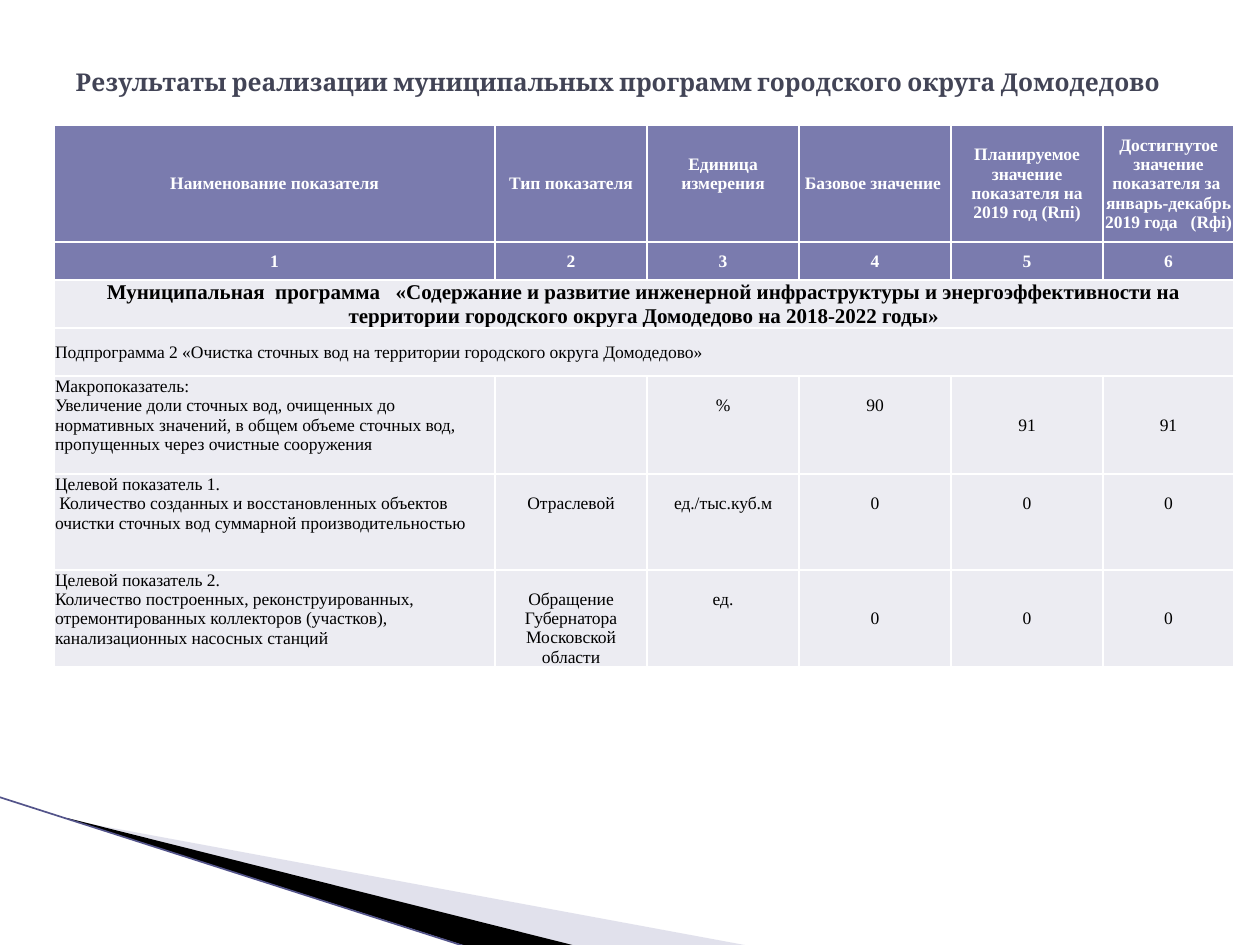
from lxml import etree
from pptx import Presentation
from pptx.dml.color import RGBColor
from pptx.enum.shapes import MSO_CONNECTOR
from pptx.enum.text import MSO_ANCHOR, PP_ALIGN
from pptx.oxml.ns import qn
from pptx.util import Pt

LINE = MSO_CONNECTOR.STRAIGHT
TOP, MID = MSO_ANCHOR.TOP, MSO_ANCHOR.MIDDLE
LEFT, CENTER = PP_ALIGN.LEFT, PP_ALIGN.CENTER
WHITE = RGBColor(0xFF, 0xFF, 0xFF)
BLACK = RGBColor(0, 0, 0)
SLATE = RGBColor(0x42, 0x44, 0x56)
HEAD = RGBColor(0x7A, 0x7B, 0xAE)
BODY = RGBColor(0xEC, 0xEC, 0xF2)
LILAC = RGBColor(0xB6, 0xB6, 0xD1)
EDGE = RGBColor(0x53, 0x54, 0x8A)
SCALE = 914400 / 126
GAP = 20

COLS = [441, 152, 152, 152, 152, 131]
ROWS = [117, 38, 48, 48, 98, 96, 97]
NAMES = [
    "Наименование показателя", "Тип показателя", "Единица измерения",
    "Базовое значение ", "Планируемое значение показателя на 2019 год (Rпi)",
    "Достигнутое значение показателя за  январь-декабрь 2019 года   (Rфi)",
]
PROGRAM = ("Муниципальная  программа   «Содержание и развитие инженерной "
           "инфраструктуры и энергоэффективности на территории городского "
           "округа Домодедово на 2018-2022 годы»")
PART = "Подпрограмма 2 «Очистка сточных вод на территории городского округа Домодедово»"
GOALS = [
    (("Макропоказатель:",
      "Увеличение доли сточных вод, очищенных до нормативных значений, в общем "
      "объеме сточных вод, пропущенных через очистные сооружения"),
     ["", "%", "90", "91", "91"], 3),
    (("Целевой показатель 1.",
      " Количество созданных и восстановленных объектов очистки сточных вод "
      "суммарной производительностью"),
     ["Отраслевой", "ед./тыс.куб.м", "0", "0", "0"], 5),
    (("Целевой показатель 2.",
      "Количество построенных, реконструированных, отремонтированных "
      "коллекторов (участков), канализационных насосных станций"),
     ["Обращение Губернатора Московской области", "ед.", "0", "0", "0"], 2),
]


def px(num):
    """Turn pixels into EMU."""
    return round(num * SCALE)


class Deck:
    """Holds the style and the current slide."""

    def __init__(self):
        self.prs = Presentation()
        self.prs.slide_width, self.prs.slide_height = px(1260), px(945)
        self.slide = self.prs.slides.add_slide(self.prs.slide_layouts[5])
        self.shapes = self.slide.shapes
        self.font = "Times New Roman"

    def run(self, para, text, size, color, bold, font=None):
        """Add one styled run."""
        run = para.add_run()
        run.text = text
        run.font.name = font or self.font
        run.font.size = Pt(size)
        run.font.bold = bold
        run.font.color.rgb = color

    def title(self, text, left, top, width, height):
        """Place and fill the title."""
        box = self.shapes.title
        box.left, box.top, box.width, box.height = map(px, (left, top, width, height))
        box.text_frame.word_wrap = True
        box.text_frame.vertical_anchor = MID
        para = box.text_frame.paragraphs[0]
        para.alignment = LEFT
        self.run(para, text, 14, SLATE, True, "Cambria")

    def wedge(self, points, color, alpha=None):
        """Draw a filled outline."""
        form = self.shapes.build_freeform(*points[0], scale=SCALE)
        form.add_line_segments(points[1:], close=True)
        shape = form.convert_to_shape()
        shape.shadow.inherit = False
        shape.fill.solid()
        shape.fill.fore_color.rgb = color
        shape.line.fill.background()
        if alpha:
            tone = shape._element.spPr.find(qn("a:solidFill"))[0]
            etree.SubElement(tone, qn("a:alpha"), val=str(alpha * 1000))

    def rule(self, start, end, color, width):
        """Draw a straight line."""
        line = self.shapes.add_connector(LINE, *map(px, start + end))
        line.line.color.rgb = color
        line.line.width = Pt(width)
        etree.SubElement(line._element.spPr, qn("a:effectLst"))

    def grid(self, left, top, cols, rows):
        """Add a plain table."""
        size = map(px, (left, top, sum(cols), sum(rows)))
        table = self.shapes.add_table(len(rows), len(cols), *size).table
        table.first_row = table.horz_banding = False
        for col, width in zip(table.columns, cols):
            col.width = px(width)
        for row, height in zip(table.rows, rows):
            row.height = px(height)
        return table

    def frame(self, cell, fill):
        """Set the fill and borders of a cell."""
        props = cell._tc.get_or_add_tcPr()
        for side in ("lnL", "lnR", "lnT", "lnB"):
            line = etree.SubElement(props, qn("a:" + side), w=str(Pt(1)))
            tone = etree.SubElement(line, qn("a:solidFill"))
            etree.SubElement(tone, qn("a:srgbClr"), val=str(WHITE))
        cell.fill.solid()
        cell.fill.fore_color.rgb = fill

    def cell(self, cell, lines, color=BLACK, size=10, bold=False,
             align=CENTER, anchor=MID, above=1, below=0):
        """Fill a cell with paragraphs."""
        cell.margin_left = cell.margin_right = px(1)
        cell.margin_top, cell.margin_bottom = px(above), px(below)
        cell.vertical_anchor = anchor
        for num, line in enumerate(lines):
            frame = cell.text_frame
            para = frame.add_paragraph() if num else frame.paragraphs[0]
            para.alignment = align
            if line:
                self.run(para, line, size, color, bold)


def main():
    """Build the slide."""
    deck = Deck()
    deck.wedge([(69, 820), (750, 946), (575, 946), (69, 819)], LILAC, 40)
    deck.wedge([(67, 818), (576, 946), (469, 947), (68, 819)], BLACK)
    deck.rule((-1, 797), (467, 947), EDGE, 0.95)
    deck.title("Результаты реализации муниципальных программ городского округа Домодедово",
               63, 38, 1134, 87)

    table = deck.grid(54, 125, COLS, ROWS)
    for row in range(len(ROWS)):
        for col in range(len(COLS)):
            deck.frame(table.cell(row, col), HEAD if row < 2 else BODY)
    for col, name in enumerate(NAMES):
        deck.cell(table.cell(0, col), [name], WHITE, bold=True,
                  below=GAP if col == 2 else 0)
        deck.cell(table.cell(1, col), [str(col + 1)], WHITE, bold=True)
    for row in (2, 3):
        table.cell(row, 0).merge(table.cell(row, len(COLS) - 1))
    deck.cell(table.cell(2, 0), [PROGRAM], size=12, bold=True)
    deck.cell(table.cell(3, 0), [PART], align=LEFT)
    for row, (goal, values, upper) in enumerate(GOALS, 4):
        deck.cell(table.cell(row, 0), goal, align=LEFT, anchor=TOP)
        for col, value in enumerate(values, 1):
            place = {"anchor": TOP, "above": GAP} if col <= upper else {}
            deck.cell(table.cell(row, col), [value], **place)
    deck.prs.save("out.pptx")


if __name__ == "__main__":
    main()
